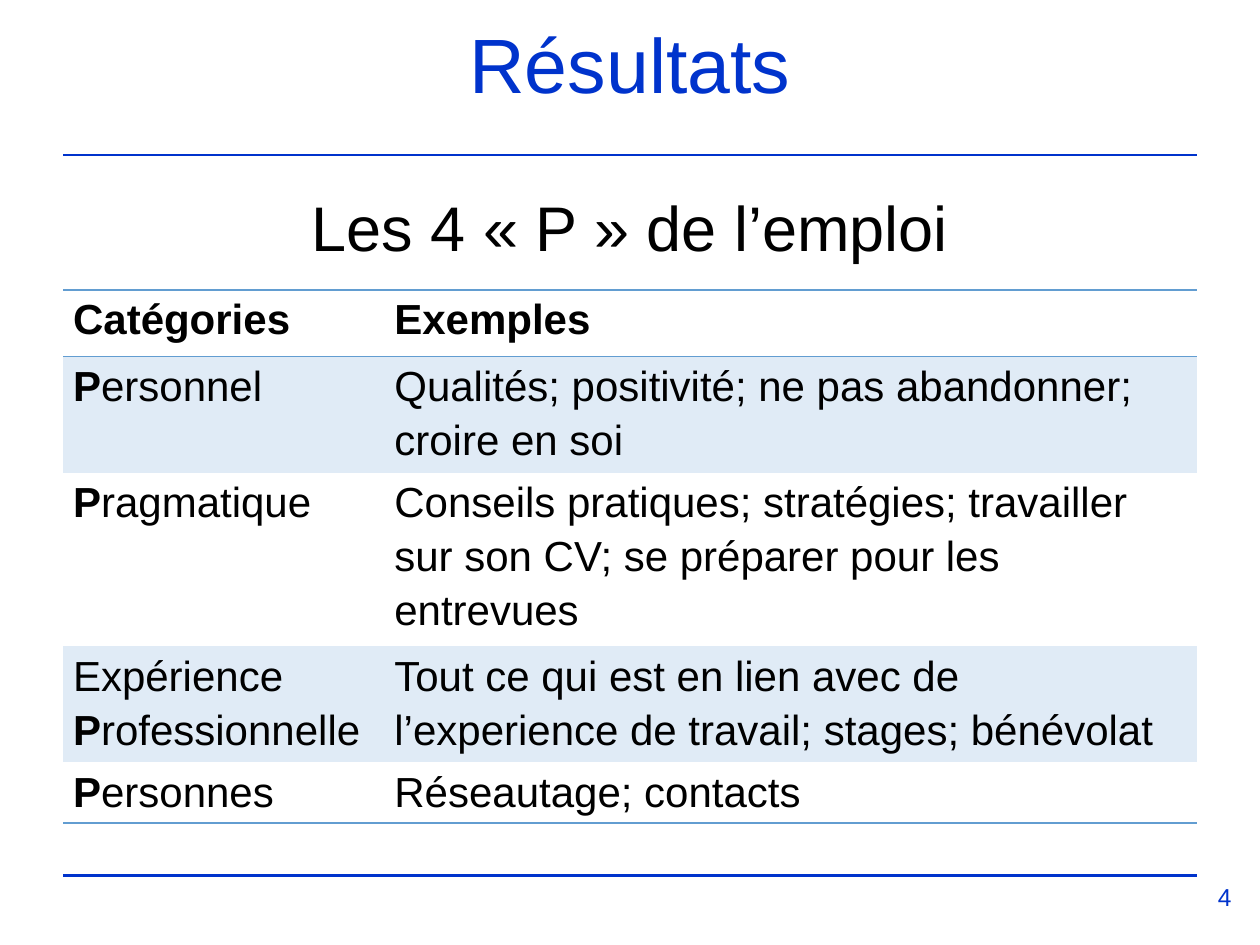
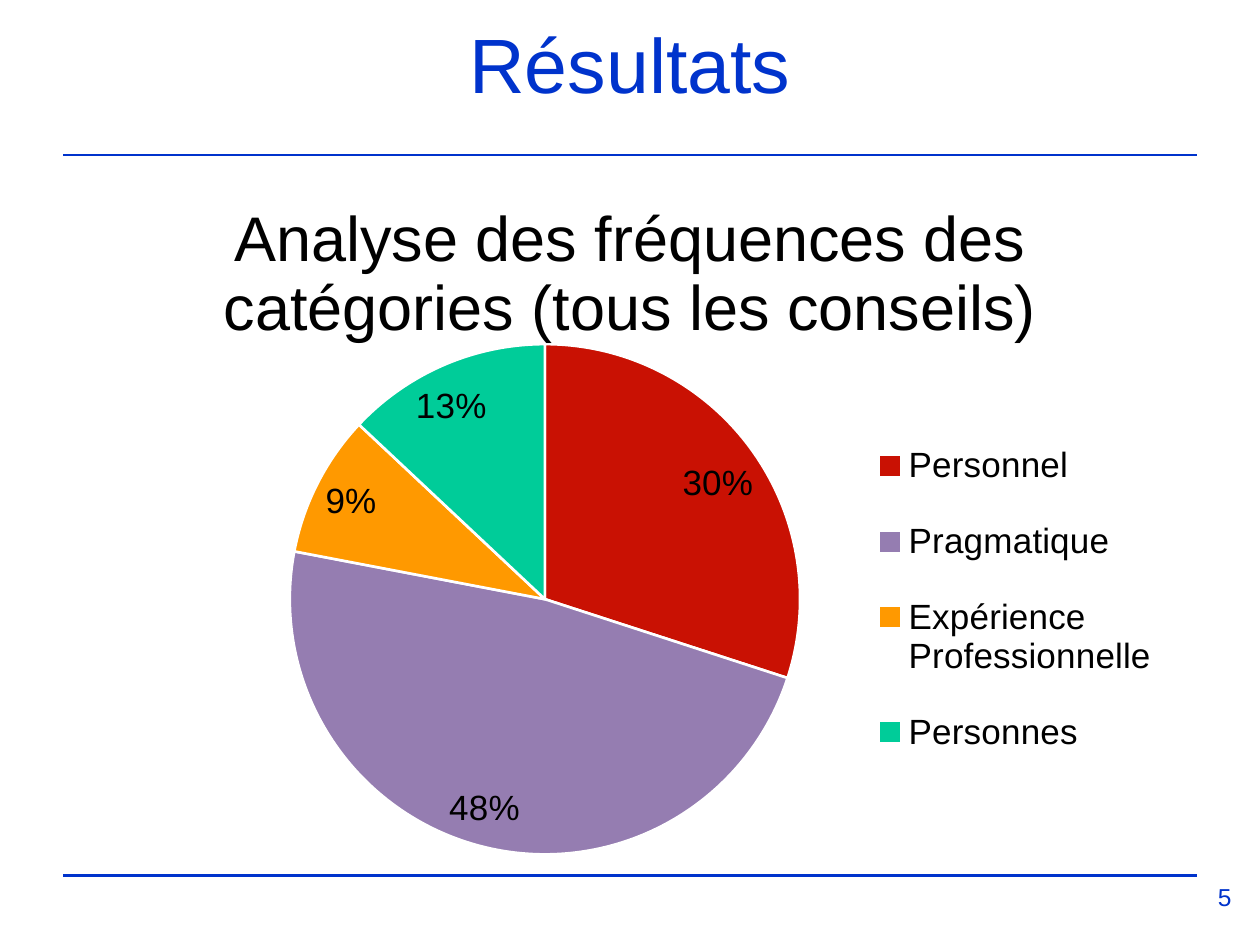
from lxml import etree
from pptx import Presentation
from pptx.chart.data import CategoryChartData
from pptx.dml.color import RGBColor
from pptx.enum.chart import XL_CHART_TYPE as Kind
from pptx.enum.chart import XL_LABEL_POSITION as Spot
from pptx.enum.chart import XL_LEGEND_POSITION as Side
from pptx.enum.shapes import MSO_CONNECTOR as Link
from pptx.enum.text import MSO_ANCHOR as Anchor
from pptx.enum.text import PP_ALIGN as Align
from pptx.oxml import parse_xml
from pptx.oxml.ns import qn
from pptx.util import Inches, Pt

# Content
TITLE = "Résultats"
HEAD = "Les 4 « P » de l’emploi"
HEADERS = ("Catégories", "Exemples")
ROWS = [
    ("Personnel", "Qualités; positivité; ne pas abandonner; croire en soi"),
    ("Pragmatique", "Conseils pratiques; stratégies; travailler sur son CV; "
                    "se préparer pour les entrevues"),
    ("Expérience Professionnelle",
     "Tout ce qui est en lien avec de l’experience de travail; stages; bénévolat"),
    ("Personnes", "Réseautage; contacts"),
]
CHART = "Analyse des fréquences des catégories (tous les conseils)"
SHARES = (30, 48, 9, 13)

# Style
FONT = "Arial"
COLORS = {"blue": "0033CC", "black": "000000", "white": "FFFFFF",
          "rule": "629DD1", "band": "E0EBF6"}
SLICES = ("C91103", "957DB1", "FF9900", "00CC99")
LEFT, WIDE = 0.5, 9
RULES = (1.23, 6.95)
COLS = (2.55, 6.45)
HEIGHTS = (0.53, 0.85, 1.29, 0.85, 0.48)
PLOT = {"x": 0.2, "y": 0.24, "w": 0.45, "h": 0.76}
KEY = {"x": 0.71, "y": 0.35, "w": 0.26, "h": 0.54}
PLAIN = "{2D5ABB26-0587-4C30-8999-92F81FD0307C}"
NS = "http://schemas.openxmlformats.org/drawingml/2006/main"


def rgb(name):
    return RGBColor.from_string(COLORS.get(name, name))


def style(font, size, color="black", bold=False):
    font.name, font.size, font.bold = FONT, Pt(size), bold
    font.color.rgb = rgb(color)


def add_text(slide, text, box, size, color, anchor=Anchor.TOP):
    frame = slide.shapes.add_textbox(*map(Inches, box)).text_frame
    frame.word_wrap = True
    frame.vertical_anchor = anchor
    frame.text = text
    para = frame.paragraphs[0]
    para.alignment = Align.CENTER
    style(para.runs[0].font, size, color)


def add_base(deck, number):
    """Blank slide with the shared rules, title and page number."""
    slide = deck.slides.add_slide(deck.slide_layouts[6])
    for y in RULES:
        line = slide.shapes.add_connector(
            Link.STRAIGHT, *map(Inches, (LEFT, y, LEFT + WIDE, y)))
        line.line.color.rgb = rgb("blue")
        line.line.width = Pt(1.5)
        etree.SubElement(line._element.spPr, qn("a:effectLst"))
    add_text(slide, TITLE, (LEFT, 0.16, WIDE, 0.75), 44, "blue", Anchor.BOTTOM)
    add_text(slide, str(number), (9.44, 6.95, 0.56, 0.42), 14, "blue")
    return slide


def add_edge(cell, side):
    cell._tc.get_or_add_tcPr().append(parse_xml(
        f'<a:{side} xmlns:a="{NS}" w="{Pt(1)}"><a:solidFill>'
        f'<a:srgbClr val="{COLORS["rule"]}"/></a:solidFill></a:{side}>'))


def fill_cell(cell, text, row, col):
    cell.margin_left = cell.margin_right = Inches(0.08)
    cell.margin_top = cell.margin_bottom = 0
    para = cell.text_frame.paragraphs[0]
    para.line_spacing = 1.15
    # The key letter P is bold in each category
    parts = text.partition("P") if row and col == 0 else (text,)
    for part in filter(None, parts):
        run = para.add_run()
        run.text = part
        style(run.font, 24, bold=row == 0 or part == "P")
    if row == 0:
        add_edge(cell, "lnT")
    if row in (0, len(ROWS)):
        add_edge(cell, "lnB")
    if row % 2:
        cell.fill.solid()
        cell.fill.fore_color.rgb = rgb("band")
    else:
        cell.fill.background()


def add_grid(slide):
    data = [HEADERS, *ROWS]
    box = (LEFT, 2.3, WIDE, sum(HEIGHTS))
    table = slide.shapes.add_table(
        len(data), len(COLS), *map(Inches, box)).table
    table.first_row = table.horz_banding = False
    table._tbl.tblPr.find(qn("a:tableStyleId")).text = PLAIN
    for col, width in zip(table.columns, COLS):
        col.width = Inches(width)
    for r, (texts, height) in enumerate(zip(data, HEIGHTS)):
        table.rows[r].height = Inches(height)
        for c, text in enumerate(texts):
            fill_cell(table.cell(r, c), text, r, c)


def place(part, index, box, **extra):
    """Fix a chart part at the given shares of the chart."""
    for old in part.findall(qn("c:layout")):
        part.remove(old)
    layout = etree.Element(qn("c:layout"))
    spot = etree.SubElement(layout, qn("c:manualLayout"))
    vals = {**extra, "xMode": "edge", "yMode": "edge", **box}
    for tag, val in vals.items():
        etree.SubElement(spot, qn(f"c:{tag}")).set("val", str(val))
    part.insert(index, layout)


def add_pie(slide):
    data = CategoryChartData()
    data.categories = [name for name, _ in ROWS]
    data.add_series(CHART, SHARES)
    box = map(Inches, (LEFT, 1.31, WIDE, 5.56))
    chart = slide.shapes.add_chart(Kind.PIE, *box, data).chart
    style(chart.font, 20)

    chart.has_title = True
    chart.chart_title.text_frame.text = CHART
    style(chart.chart_title.text_frame.paragraphs[0].runs[0].font, 36)
    chart.has_legend = True
    chart.legend.position = Side.RIGHT
    chart.legend.include_in_layout = False
    style(chart.legend.font, 20)
    place(chart._chartSpace.chart.plotArea, 0, PLOT, layoutTarget="inner")
    place(chart.legend._element, 1, KEY)

    plot = chart.plots[0]
    plot.vary_by_categories = True
    for i, color in enumerate(SLICES):
        form = plot.series[0].points[i].format
        form.fill.solid()
        form.fill.fore_color.rgb = rgb(color)
        form.line.color.rgb = rgb("white")
        form.line.width = Pt(1.5)
    plot.has_data_labels = True
    labels = plot.data_labels
    labels.show_percentage, labels.show_value = True, False
    labels.number_format, labels.number_format_is_linked = "0%", False
    labels.position = Spot.BEST_FIT
    style(labels.font, 20)


def main():
    deck = Presentation()
    deck.slide_width, deck.slide_height = Inches(10), Inches(7.5)

    # Table of the four categories
    slide = add_base(deck, 4)
    add_grid(slide)
    add_text(slide, HEAD, (LEFT, 1.45, WIDE, 0.71), 36, "black")

    # Share of each category
    add_pie(add_base(deck, 5))
    deck.save("out.pptx")


if __name__ == "__main__":
    main()
